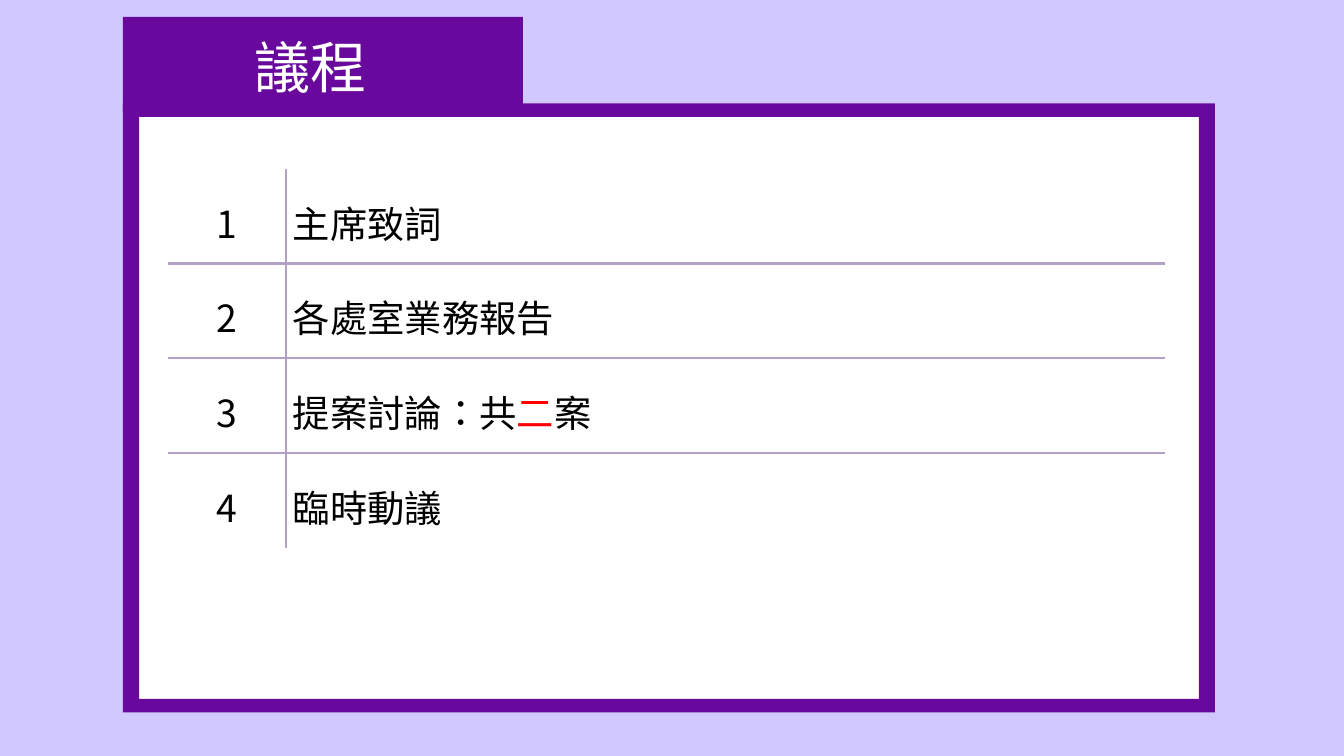
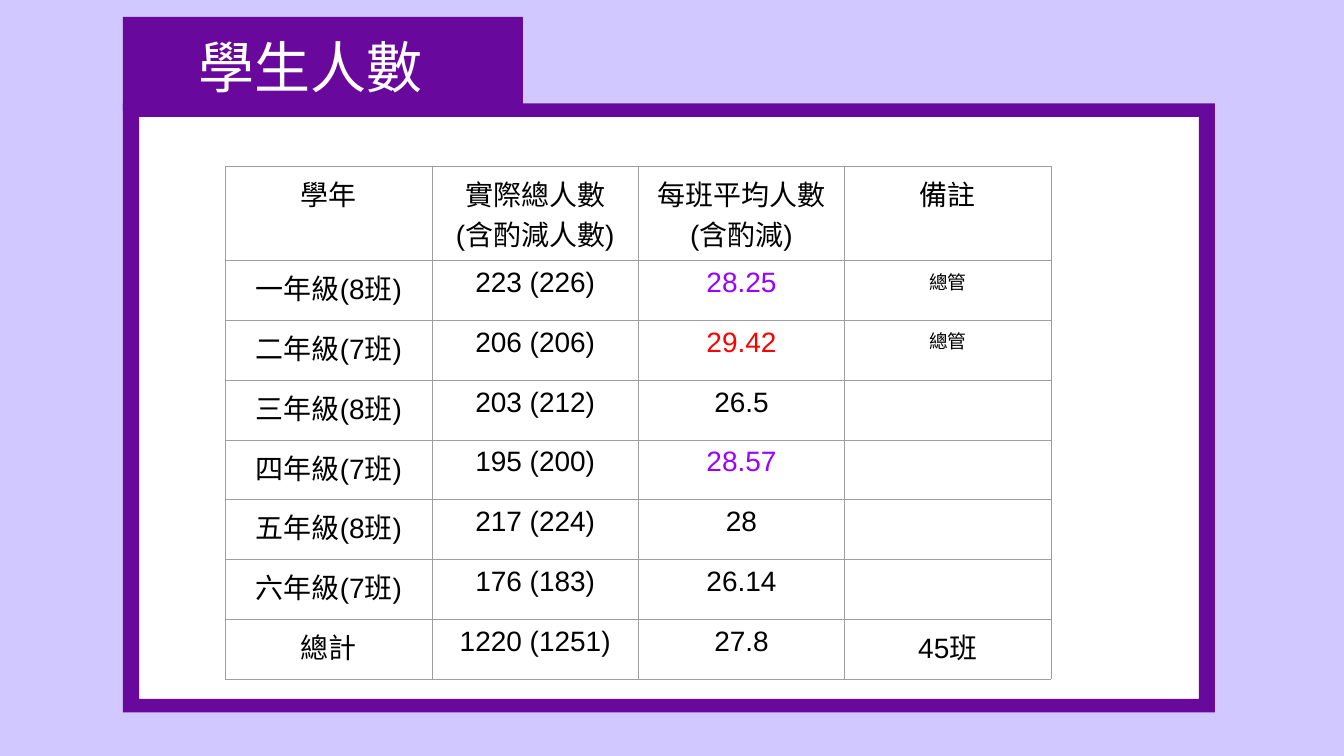
import pptx
import pptx.dml.color
import pptx.enum.shapes
import pptx.enum.text
import pptx.oxml.ns
import pptx.util
from lxml import etree

Inches = pptx.util.Inches
Pt = pptx.util.Pt
ALIGN = pptx.enum.text.PP_ALIGN
MIDDLE = pptx.enum.text.MSO_ANCHOR.MIDDLE
qn = pptx.oxml.ns.qn

LILAC, PURPLE, WHITE, BLACK = "D0C8FF", "69089D", "FFFFFF", "000000"
AGENDA_LINE, GRID_LINE = "B2A0C7", "9E9E9E"
RED, VIOLET = "FF0000", "9900FF"
CJK, ARIAL = "Noto Sans CJK TC", "Arial"
PLAIN_TABLE = "{2D5ABB26-0587-4C30-8999-92F81FD0307C}"

FOLDER = (1.83, 1.54, 16.25, 9.06)
TAB = (1.83, 0.25, 5.95, 1.4)
TITLE = (0.67, 0.11, 7.9, 1.75)
SIDE_EDGE, TOP_EDGE = 0.24, 0.2

AGENDA = [
    [("主席致詞", BLACK)],
    [("各處室業務報告", BLACK)],
    [("提案討論：共", BLACK), ("二", RED), ("案", BLACK)],
    [("臨時動議", BLACK)],
]
HEADCOUNT = [
    ("學年", "實際總人數\n(含酌減人數)", "每班平均人數\n(含酌減)", "備註"),
    ("一年級(8班)", "223 (226)", "28.25", "總管"),
    ("二年級(7班)", "206 (206)", "29.42", "總管"),
    ("三年級(8班)", "203 (212)", "26.5", ""),
    ("四年級(7班)", "195 (200)", "28.57", ""),
    ("五年級(8班)", "217 (224)", "28", ""),
    ("六年級(7班)", "176 (183)", "26.14", ""),
    ("總計", "1220 (1251)", "27.8", "45班"),
]
AVERAGE_COLOURS = {"28.25": VIOLET, "29.42": RED, "28.57": VIOLET}


def rgb(colour):
    """Turn a hex string into a colour."""
    return pptx.dml.color.RGBColor.from_string(colour)


def paint(shape, colour):
    """Give a shape a flat fill without line or shadow."""
    shape.fill.solid()
    shape.fill.fore_color.rgb = rgb(colour)
    shape.line.fill.background()
    shape.shadow.inherit = False


def style_text(frame, size, face, colour, align=ALIGN.CENTER, spacing=None):
    """Set the font, alignment and line spacing of every paragraph."""
    for paragraph in frame.paragraphs:
        paragraph.alignment = align
        if spacing:
            paragraph.line_spacing = spacing
        font = paragraph.font
        font.size = Pt(size)
        font.name = face
        font.color.rgb = rgb(colour)
        font._rPr.set("lang", "zh-TW")
        etree.SubElement(font._rPr, qn("a:ea"), typeface=CJK)


def border(cell, sides, colour, width):
    """Draw the named sides (from L, R, T, B) of a table cell."""
    properties = cell._tc.get_or_add_tcPr()
    for side in "LRTB":
        if side in sides:
            line = etree.SubElement(properties, qn("a:ln" + side), w=str(Pt(width)))
            fill = etree.SubElement(line, qn("a:solidFill"))
            etree.SubElement(fill, qn("a:srgbClr"), val=colour)


def plain_table(slide, left, top, widths, heights):
    """Add a table without style and return it."""
    frame = slide.shapes.add_table(len(heights), len(widths), Inches(left), Inches(top),
                                   Inches(sum(widths)), Inches(sum(heights)))
    table = frame.table
    table.first_row = table.horz_banding = False
    table._tbl.tblPr.find(qn("a:tableStyleId")).text = PLAIN_TABLE
    for column, width in zip(table.columns, widths):
        column.width = Inches(width)
    for row, height in zip(table.rows, heights):
        row.height = Inches(height)
    return table


def draw_folder(slide, left, top, width, height):
    """Draw the white sheet with its purple frame, and the tab above."""
    rectangle = pptx.enum.shapes.MSO_SHAPE.RECTANGLE
    sheet = slide.shapes.add_shape(rectangle, Inches(left + 0.12), Inches(top + 0.1),
                                   Inches(width - 0.24), Inches(height - 0.2))
    paint(sheet, WHITE)

    x1, x2, x3, x4 = map(Inches, (left, left + SIDE_EDGE,
                                  left + width - SIDE_EDGE, left + width))
    y1, y2, y3, y4 = map(Inches, (top, top + TOP_EDGE,
                                  top + height - TOP_EDGE, top + height))
    outline = slide.shapes.build_freeform(x1, y1)
    outline.add_line_segments([(x4, y1), (x4, y4), (x1, y4)])
    outline.move_to(x2, y2)
    outline.add_line_segments([(x2, y3), (x3, y3), (x3, y2)])
    paint(outline.convert_to_shape(), PURPLE)
    paint(slide.shapes.add_shape(rectangle, *map(Inches, TAB)), PURPLE)


def folder_slide(deck, heading):
    """Add a slide with the folder and its heading on the tab."""
    slide = deck.slides.add_slide(deck.slide_layouts[5])
    slide.background.fill.solid()
    slide.background.fill.fore_color.rgb = rgb(LILAC)
    draw_folder(slide, *FOLDER)
    title = slide.shapes.title
    title.left, title.top, title.width, title.height = map(Inches, TITLE)
    title.text_frame.text = heading
    title.text_frame.vertical_anchor = MIDDLE
    title.text_frame.word_wrap = True
    title.text_frame.auto_size = pptx.enum.text.MSO_AUTO_SIZE.NONE
    style_text(title.text_frame, 60, CJK, WHITE)
    slide.shapes._spTree.append(title._element)
    return slide


def agenda_table(slide, left, top):
    """List the numbered agenda items between thin rules."""
    last = len(AGENDA) - 1
    table = plain_table(slide, left, top, [1.76, 13.07], [1.41] * len(AGENDA))
    for index, item in enumerate(AGENDA):
        number, topic = table.cell(index, 0), table.cell(index, 1)
        number.text = str(index + 1)
        paragraph = topic.text_frame.paragraphs[0]
        for words, colour in item:
            run = paragraph.add_run()
            run.text = words
            if colour != BLACK:
                run.font.color.rgb = rgb(colour)
        rules = ("T" if index else "") + ("B" if index < last else "")
        for cell, side, align in ((number, "R", ALIGN.CENTER), (topic, "L", ALIGN.LEFT)):
            style_text(cell.text_frame, 40, CJK, BLACK, align, 1.22)
            border(cell, side + rules, AGENDA_LINE, 3)
            cell.vertical_anchor = MIDDLE
            cell.fill.background()


def headcount_table(slide, left, top):
    """Show the number of students by grade."""
    table = plain_table(slide, left, top, [3.07] * 4, [1.4] + [0.89] * 7)
    for row, record in enumerate(HEADCOUNT):
        for column, words in enumerate(record):
            cell = table.cell(row, column)
            cell.text = words
            cell.margin_top = cell.margin_bottom = Inches(0.1)
            size = 20 if words == "總管" else 30
            style_text(cell.text_frame, size, ARIAL, AVERAGE_COLOURS.get(words, BLACK))
            border(cell, "LRTB", GRID_LINE, 0.75)
            cell.fill.background()


def main():
    """Build the agenda and headcount slides."""
    deck = pptx.Presentation()
    deck.slide_width, deck.slide_height = Inches(20), Inches(11.25)
    agenda_table(folder_slide(deck, "議程"), 2.5, 2.51)
    headcount_table(folder_slide(deck, "學生人數"), 3.36, 2.47)
    deck.save("out.pptx")


if __name__ == "__main__":
    main()
